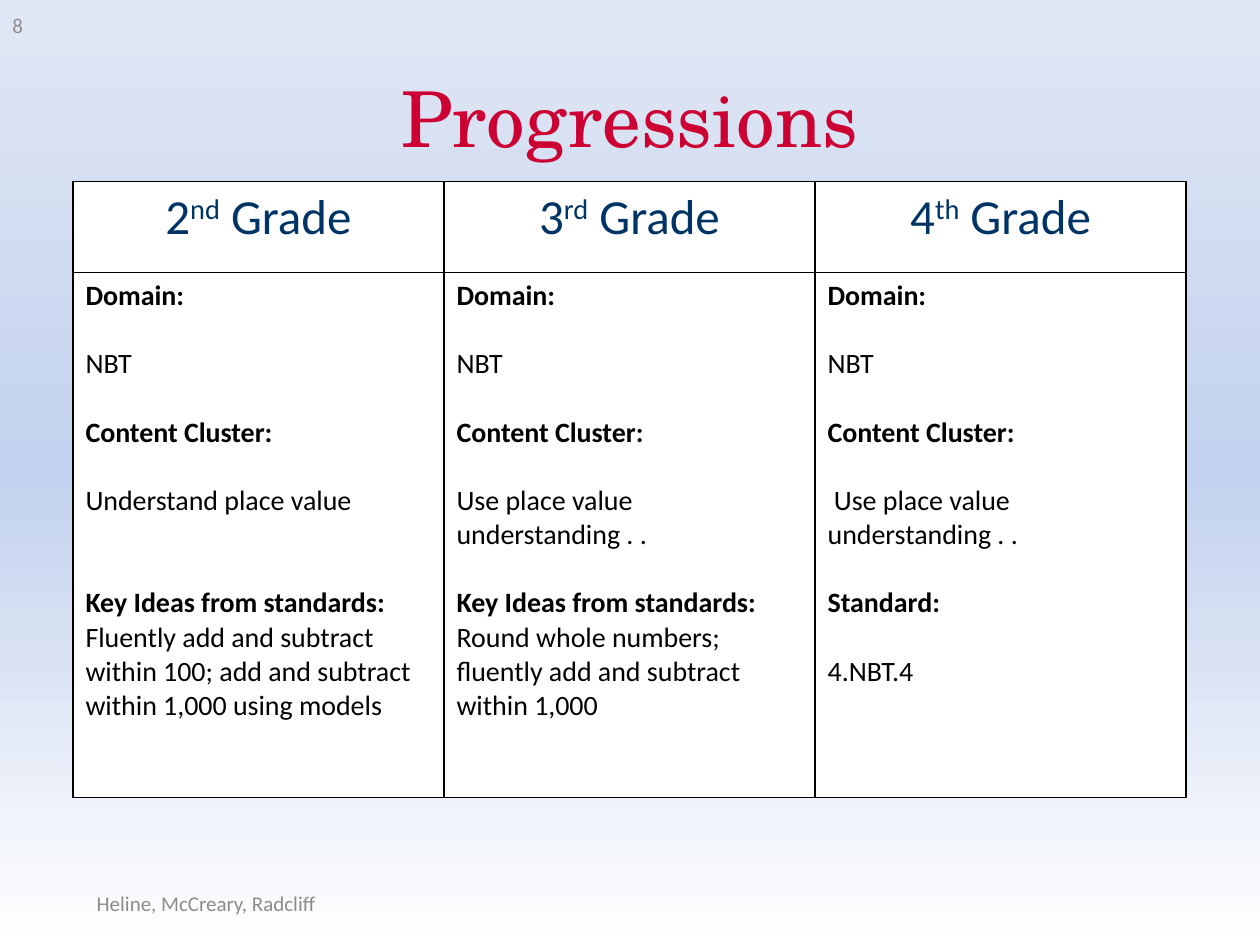
"""Build the Progressions slide: a three-grade comparison table."""
from copy import deepcopy

from lxml.etree import SubElement
from pptx import Presentation
from pptx.dml.color import RGBColor
from pptx.enum.text import MSO_ANCHOR as Anchor, PP_ALIGN as Align
from pptx.oxml.ns import qn
from pptx.util import Cm, Pt

BACKGROUND = [(0, "FFFFFF"), (0.5, "C2D1ED"), (1, "E1E8F5")]
LABELS = [
    ("Progressions", (1.27, 0.76, 22.86, 3.18), "TeX Gyre Schola", 44, "CC0033", Align.CENTER),
    ("8", (0, 0, 5.92, 1.02), "Calibri", 12, "8C8C8C", Align.LEFT),
    ("Heline, McCreary, Radcliff", (1.7, 17.7, 8.05, 1.02), "Calibri", 12, "8C8C8C", Align.LEFT),
]
START = [("Domain:", 0), ("NBT", 1), ("Content Cluster:", 1)]
GRADES = [
    ("2", "nd", START + [
        ("Understand place value", 1),
        ("Key Ideas from standards:", 2),
        ("Fluently add and subtract within 100; add and subtract within 1,000 using models", 0)]),
    ("3", "rd", START + [
        ("Use place value understanding . .", 1),
        ("Key Ideas from standards:", 1),
        ("Round whole numbers; fluently add and subtract within 1,000", 0)]),
    ("4", "th", START + [
        (" Use place value understanding . .", 1),
        ("Standard:", 1),
        ("4.NBT.4", 1)]),
]
LEFT, TOP, COL_WIDTH, ROW_HEIGHTS = 1.47, 3.66, 7.48, (1.83, 10.59)
LINE_PT = 19.5


def rgb(value):
    return RGBColor.from_string(value)


def set_font(p, name, size, color, bold=False):
    font = p.font
    font.name, font.size, font.bold = name, Pt(size), bold
    font.color.rgb = rgb(color)


def paint_background(s):
    fill = s.background.fill
    fill.gradient()
    fill.gradient_angle = 90
    stop_list = next(s._element.iter(qn("a:gsLst")))
    stop_list.insert(0, deepcopy(stop_list[0]))
    for stop, (position, color) in zip(fill.gradient_stops, BACKGROUND):
        stop.position = position
        stop.color.rgb = rgb(color)


def add_label(s, text, box, name, size, color, align):
    tf = s.shapes.add_textbox(*map(Cm, box)).text_frame
    tf.word_wrap, tf.vertical_anchor = True, Anchor.MIDDLE
    p = tf.paragraphs[0]
    p.text, p.alignment = text, align
    set_font(p, name, size, color)


def style_cell(cell):
    tc_pr = cell._tc.get_or_add_tcPr()
    for side in ("lnL", "lnR", "lnT", "lnB"):
        ln = SubElement(tc_pr, qn(f"a:{side}"), w=str(Pt(1)))
        SubElement(SubElement(ln, qn("a:solidFill")), qn("a:srgbClr"), val="000000")
    cell.fill.solid()
    cell.fill.fore_color.rgb = rgb("FFFFFF")


def fill_header(cell, number, suffix):
    p = cell.text_frame.paragraphs[0]
    p.alignment = Align.CENTER
    for text in (number, suffix, " Grade"):
        r = p.add_run()
        r.text = text
        if text == suffix:
            r._r.get_or_add_rPr().set("baseline", "30000")
    set_font(p, "Calibri", 28, "003366")


def fill_body(cell, lines):
    tf = cell.text_frame
    for i, (text, gap) in enumerate(lines):
        p = tf.add_paragraph() if i else tf.paragraphs[0]
        p.text = text
        if gap:
            p.space_before = Pt(gap * LINE_PT)
        set_font(p, "Calibri", 16, "000000", text.endswith(":"))


def add_grades(s):
    box = (LEFT, TOP, COL_WIDTH * len(GRADES), sum(ROW_HEIGHTS))
    table = s.shapes.add_table(len(ROW_HEIGHTS), len(GRADES), *map(Cm, box)).table
    for row, height in zip(table.rows, ROW_HEIGHTS):
        row.height = Cm(height)
    for i, (number, suffix, lines) in enumerate(GRADES):
        table.columns[i].width = Cm(COL_WIDTH)
        fill_header(table.cell(0, i), number, suffix)
        fill_body(table.cell(1, i), lines)
    for cell in table.iter_cells():
        style_cell(cell)


def main():
    prs = Presentation()
    prs.slide_width, prs.slide_height = Cm(25.4), Cm(19.05)
    s = prs.slides.add_slide(prs.slide_layouts[6])
    paint_background(s)
    for label in LABELS:
        add_label(s, *label)
    add_grades(s)
    prs.save("out.pptx")


if __name__ == "__main__":
    main()
